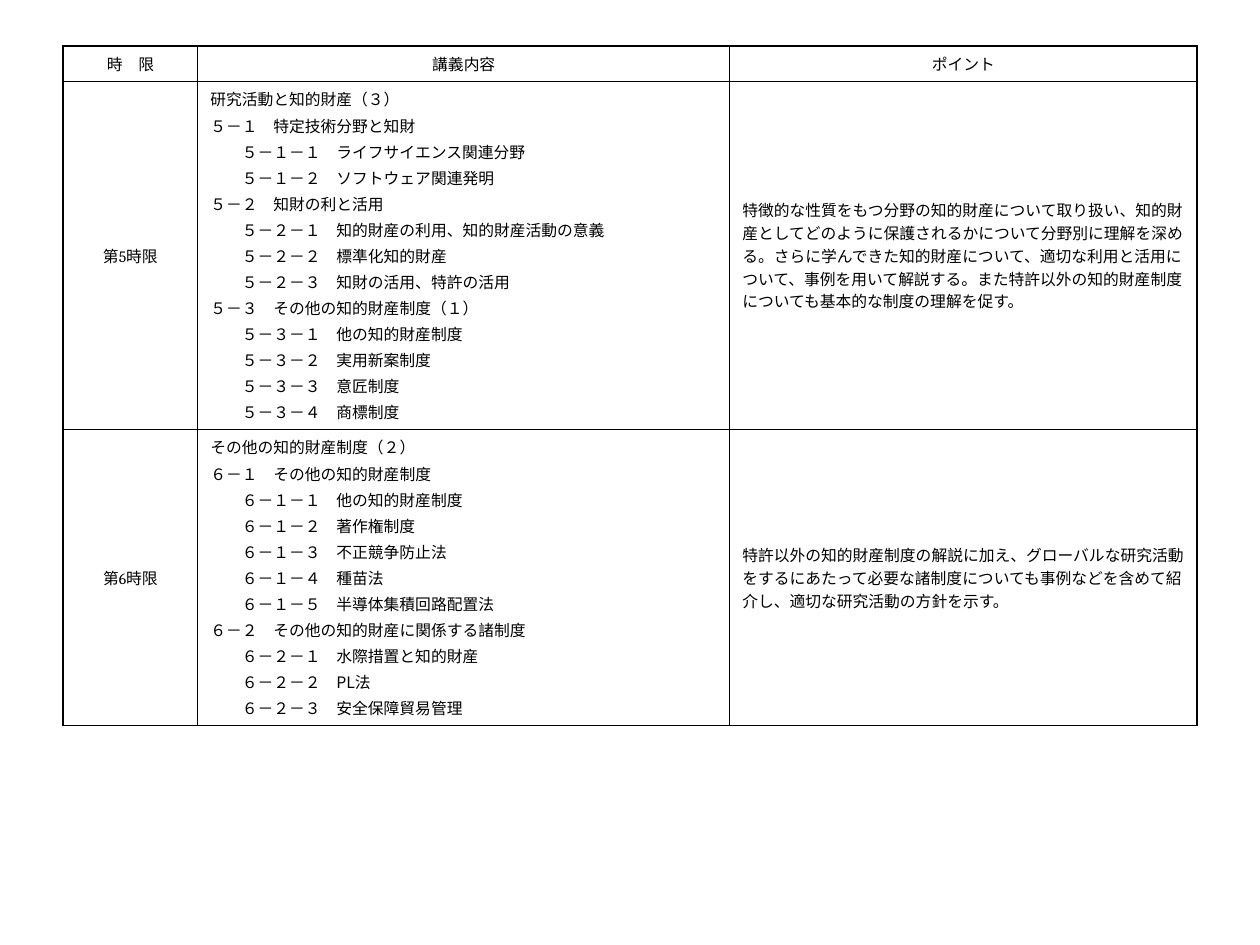
from dataclasses import dataclass

from lxml import etree
from pptx import Presentation
from pptx.dml.color import RGBColor
from pptx.enum.text import MSO_ANCHOR, PP_ALIGN
from pptx.oxml.ns import qn
from pptx.util import Pt

MIDDLE = MSO_ANCHOR.MIDDLE
CENTER = PP_ALIGN.CENTER
LEFT = PP_ALIGN.LEFT

BLACK = "000000"
SERIF = "Cambria"
SANS = "Noto Sans CJK JP"
FONT_SIZE = 9
OUTLINE = 1
INNER_LINE = 0.5

TABLE_LEFT, TABLE_TOP = 36, 26.2
COLUMN_WIDTHS = (77, 304, 267)
ROW_HEIGHTS = (20.3, 198.8, 169.1)


@dataclass
class Topic:
    text: str
    indent: float = 0


@dataclass
class Session:
    period: str
    topics: list[Topic]
    point: str


def sub(text: str) -> Topic:
    """Return a second-level topic, indented by two characters."""
    return Topic(text, 2 * FONT_SIZE)


HEADINGS = ("時　限", "講義内容", "ポイント")
SESSIONS = (
    Session(
        "第5時限",
        [
            Topic("研究活動と知的財産（３）"),
            Topic("５－１　特定技術分野と知財"),
            sub("５－１－１　ライフサイエンス関連分野"),
            sub("５－１－２　ソフトウェア関連発明"),
            Topic("５－２　知財の利と活用"),
            sub("５－２－１　知的財産の利用、知的財産活動の意義"),
            sub("５－２－２　標準化知的財産"),
            sub("５－２－３　知財の活用、特許の活用"),
            Topic("５－３　その他の知的財産制度（１）"),
            sub("５－３－１　他の知的財産制度"),
            sub("５－３－２　実用新案制度"),
            sub("５－３－３　意匠制度"),
            sub("５－３－４　商標制度"),
        ],
        "特徴的な性質をもつ分野の知的財産について取り扱い、知的財産としてどのように"
        "保護されるかについて分野別に理解を深める。さらに学んできた知的財産について、"
        "適切な利用と活用について、事例を用いて解説する。また特許以外の知的財産制度に"
        "ついても基本的な制度の理解を促す。",
    ),
    Session(
        "第6時限",
        [
            Topic("その他の知的財産制度（２）"),
            Topic("６－１　その他の知的財産制度"),
            sub("６－１－１　他の知的財産制度"),
            sub("６－１－２　著作権制度"),
            sub("６－１－３　不正競争防止法"),
            sub("６－１－４　種苗法"),
            sub("６－１－５　半導体集積回路配置法"),
            Topic("６－２　その他の知的財産に関係する諸制度"),
            sub("６－２－１　水際措置と知的財産"),
            sub("６－２－２　PL法"),
            sub("６－２－３　安全保障貿易管理"),
        ],
        "特許以外の知的財産制度の解説に加え、グローバルな研究活動をするにあたって"
        "必要な諸制度についても事例などを含めて紹介し、適切な研究活動の方針を示す。",
    ),
)


def color(value: str) -> RGBColor:
    return RGBColor.from_string(value)


def set_border(cell, side: str, width: float) -> None:
    line = etree.SubElement(
        cell._tc.get_or_add_tcPr(), qn(f"a:ln{side}"), w=str(Pt(width))
    )
    fill = etree.SubElement(line, qn("a:solidFill"))
    etree.SubElement(fill, qn("a:srgbClr"), val=BLACK)


def style_cell(cell, row: int, column: int) -> None:
    """Give the cell its borders, an empty fill and middle anchoring."""
    at_edge = {
        "L": column == 0,
        "R": column == len(COLUMN_WIDTHS) - 1,
        "T": row == 0,
        "B": False,
    }
    for side, is_edge in at_edge.items():
        set_border(cell, side, OUTLINE if is_edge else INNER_LINE)
    cell.fill.background()
    cell.vertical_anchor = MIDDLE


def write_cell(cell, topics: list[Topic], font: str, alignment: PP_ALIGN) -> None:
    text_frame = cell.text_frame
    text_frame.text = "\n".join(topic.text for topic in topics)
    for index, (paragraph, topic) in enumerate(zip(text_frame.paragraphs, topics)):
        paragraph.alignment = alignment
        paragraph.space_before = Pt(0.2 * FONT_SIZE if index else 0)
        if topic.indent:
            paragraph._p.get_or_add_pPr().set("marL", str(Pt(topic.indent)))
        for run in paragraph.runs:
            run.font.size = Pt(FONT_SIZE)
            run.font.name = font
            run.font.color.rgb = color(BLACK)
            etree.SubElement(
                run._r.get_or_add_rPr(), qn("a:ea"), typeface=SANS
            )


def add_schedule(slide) -> None:
    frame = slide.shapes.add_table(
        len(ROW_HEIGHTS), len(COLUMN_WIDTHS), Pt(TABLE_LEFT), Pt(TABLE_TOP),
        Pt(sum(COLUMN_WIDTHS)), Pt(sum(ROW_HEIGHTS)),
    )
    table = frame.table
    table.first_row = False
    table.horz_banding = False
    for column, width in zip(table.columns, COLUMN_WIDTHS):
        column.width = Pt(width)
    for row, height in zip(table.rows, ROW_HEIGHTS):
        row.height = Pt(height)
    for row in range(len(ROW_HEIGHTS)):
        for column in range(len(COLUMN_WIDTHS)):
            style_cell(table.cell(row, column), row, column)

    for column, heading in enumerate(HEADINGS):
        write_cell(table.cell(0, column), [Topic(heading)], SERIF, CENTER)
    for row, session in enumerate(SESSIONS, start=1):
        write_cell(table.cell(row, 0), [Topic(session.period)], SERIF, CENTER)
        write_cell(table.cell(row, 1), session.topics, SANS, LEFT)
        write_cell(table.cell(row, 2), [Topic(session.point)], SERIF, LEFT)


def main() -> None:
    presentation = Presentation()
    presentation.slide_width = Pt(720)
    presentation.slide_height = Pt(540)
    slide = presentation.slides.add_slide(presentation.slide_layouts[6])
    add_schedule(slide)
    presentation.save("out.pptx")


if __name__ == "__main__":
    main()
